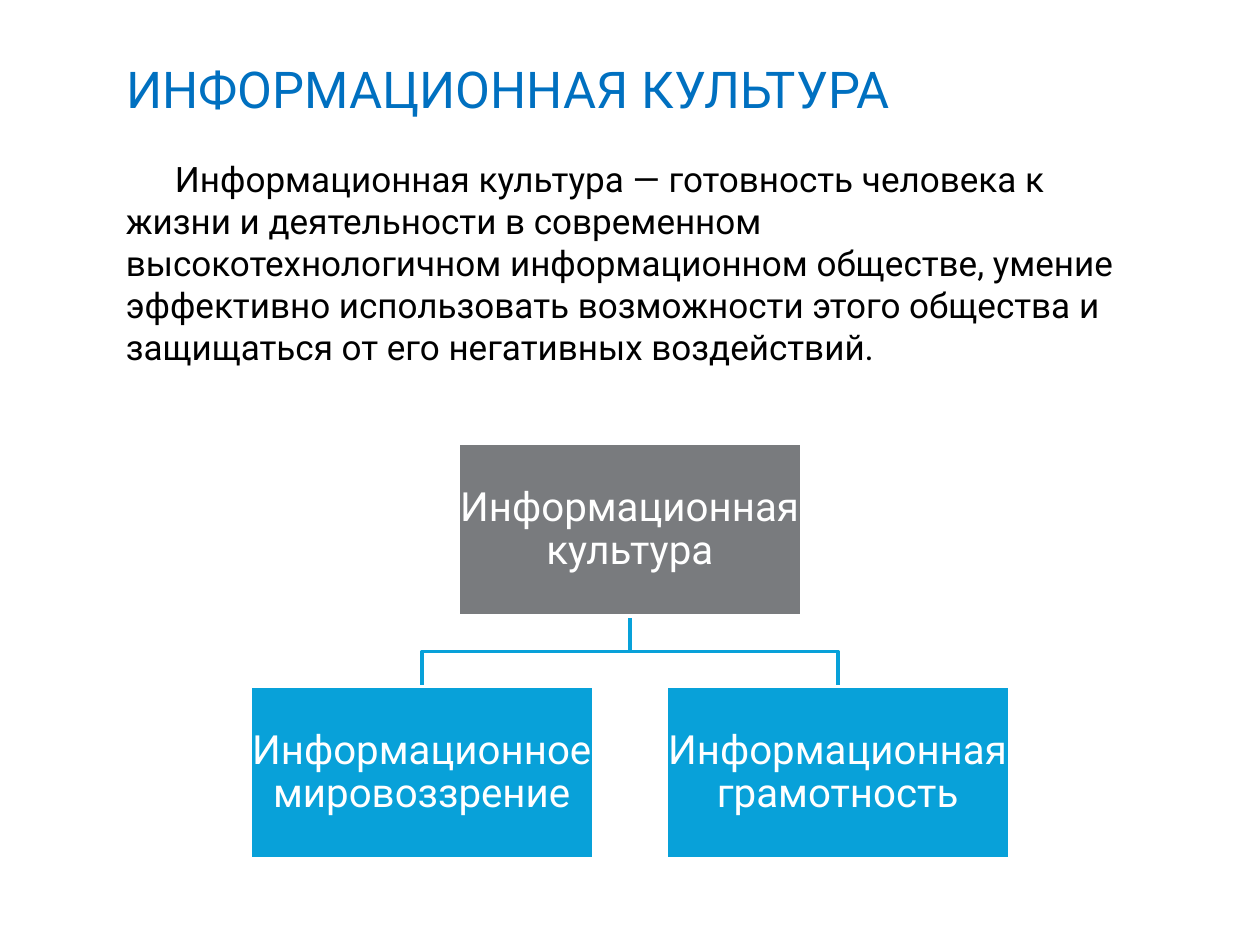
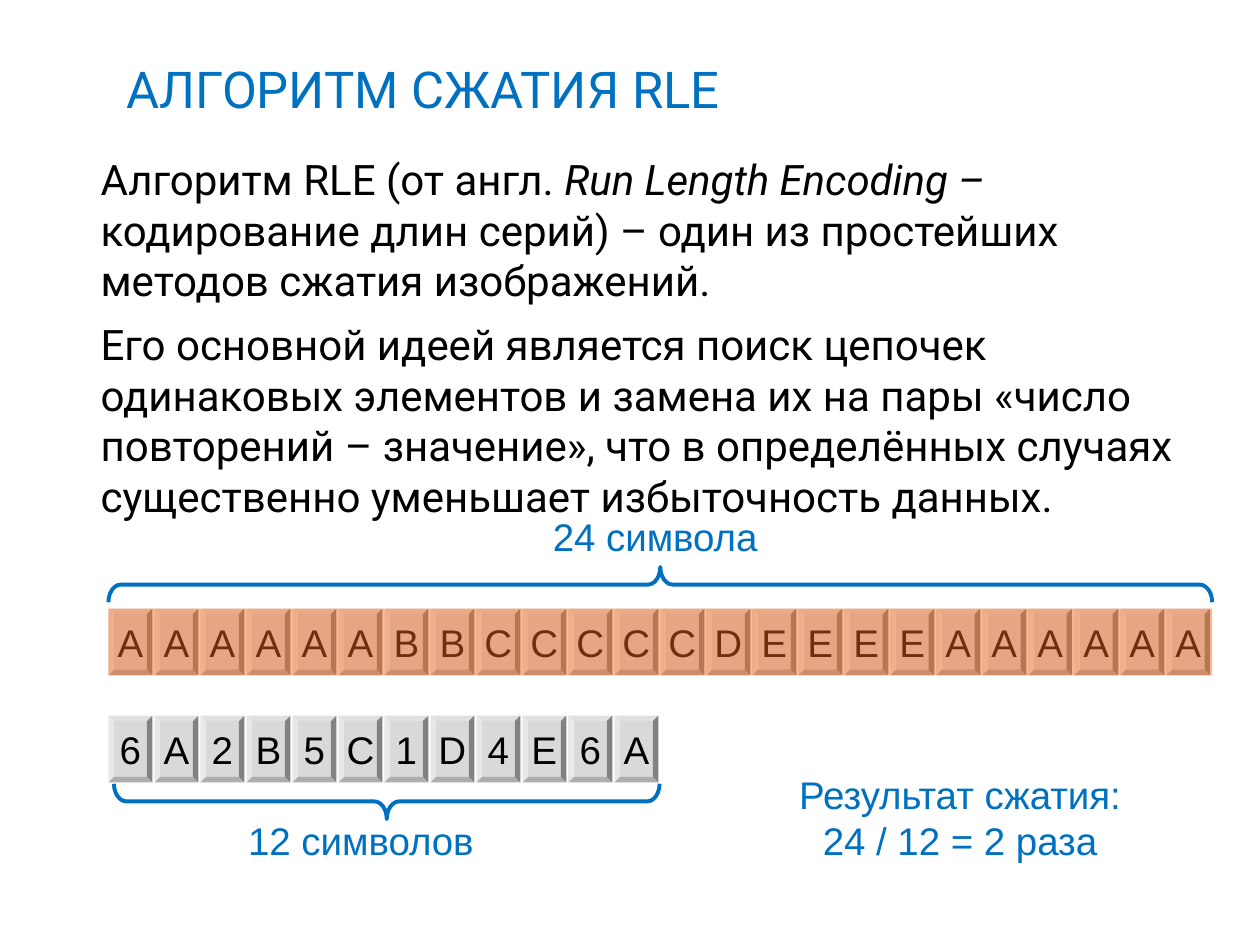
import itertools

import pptx
import pptx.dml.color
import pptx.enum.shapes
import pptx.enum.text
import pptx.oxml
import pptx.oxml.ns
import pptx.util

Inches = pptx.util.Inches
Pt = pptx.util.Pt
SHAPE = pptx.enum.shapes.MSO_SHAPE
ALIGN = pptx.enum.text.PP_ALIGN
ANCHOR = pptx.enum.text.MSO_ANCHOR

COLORS = {
    "title": "0070C0",
    "text": "000000",
    "white": "FFFFFF",
    "root": "797B7E",
    "branch": "08A1D9",
    "cell": "D9D9D9",
    "series": "F96A1B",
}
STYLES = {
    "title": {"name": "Roboto", "size": Pt(29), "color": "title"},
    "intro": {"name": "Roboto", "size": Pt(20), "color": "text"},
    "body": {"name": "Roboto", "size": Pt(24), "color": "text"},
    "node": {"name": "Roboto", "size": Pt(23), "color": "white"},
    "label": {"name": "Arial", "size": Pt(22), "color": "title"},
    "cell": {"name": "Arial", "size": Pt(22), "color": "text"},
}


def rgb(name):
    return pptx.dml.color.RGBColor.from_string(COLORS[name])


def put(obj, values):
    for key, value in values.items():
        setattr(obj, key, value)


class Deck:
    def __init__(self):
        self.prs = pptx.Presentation()
        put(self.prs, {"slide_width": Inches(10), "slide_height": Inches(7.5)})
        self.s = None

    def slide(self, title):
        self.s = self.prs.slides.add_slide(self.prs.slide_layouts[5])
        sp = self.s.shapes.title
        box = dict(zip(("left", "top", "width", "height"), map(Inches, (0.9, 0.4, 8.22, 0.6))))
        put(sp, box)
        self.set_text(sp, [title], "title", anchor=ANCHOR.MIDDLE)

    def set_text(self, sp, paragraphs, style, align=ALIGN.LEFT, anchor=ANCHOR.TOP,
                 insets=(0.1, 0.05), indent=0, gap=0, spacing=1.0):
        tf = sp.text_frame
        dx, dy = map(Inches, insets)
        put(tf, {"word_wrap": True, "vertical_anchor": anchor,
                 "auto_size": pptx.enum.text.MSO_AUTO_SIZE.NONE,
                 "margin_left": dx, "margin_right": dx,
                 "margin_top": dy, "margin_bottom": dy})
        for i, runs in enumerate(paragraphs):
            p = tf.add_paragraph() if i else tf.paragraphs[0]
            put(p, {"alignment": align, "line_spacing": spacing,
                    "space_before": Pt(gap if i else 0)})
            if indent:
                p._p.get_or_add_pPr().set("indent", str(Inches(indent)))
            for text, italic in [(runs, False)] if isinstance(runs, str) else runs:
                r = p.add_run()
                r.text = text
                font = dict(STYLES[style], italic=italic)
                r.font.color.rgb = rgb(font.pop("color"))
                put(r.font, font)

    def text(self, box, paragraphs, style, **layout):
        sp = self.s.shapes.add_textbox(*map(Inches, box))
        self.set_text(sp, paragraphs, style, **layout)

    def label(self, box, *lines):
        self.text(box, lines, "label", align=ALIGN.CENTER, anchor=ANCHOR.BOTTOM, insets=(0, 0.05))

    def shape(self, kind, box, fill=None, line=None, width=2, opacity=None):
        sp = self.s.shapes.add_shape(kind, *map(Inches, box))
        self.paint(sp, fill, line, width)
        if opacity:
            color = sp._element.spPr.find(".//" + pptx.oxml.ns.qn("a:srgbClr"))
            color.append(pptx.oxml.parse_xml(
                f'<a:alpha {pptx.oxml.ns.nsdecls("a")} val="{opacity * 1000}"/>'))
        return sp

    def paint(self, sp, fill, line, width):
        sp.shadow.inherit = False
        if fill:
            sp.fill.solid()
            sp.fill.fore_color.rgb = rgb(fill)
        else:
            sp.fill.background()
        if line:
            sp.line.color.rgb = rgb(line)
            sp.line.width = Pt(width)
        else:
            sp.line.fill.background()

    def node(self, box, text, fill):
        sp = self.shape(SHAPE.RECTANGLE, box, fill, "white")
        self.set_text(sp, [text], "node", ALIGN.CENTER, ANCHOR.MIDDLE, (0.01, 0.02), spacing=0.9)

    def branch(self, points):
        start, *rest = [tuple(map(Inches, point)) for point in points]
        builder = self.s.shapes.build_freeform(*start)
        builder.add_line_segments(rest, close=False)
        self.paint(builder.convert_to_shape(), None, "branch", 2)

    def brace(self, center_x, center_y, length, rotation):
        depth = 0.28
        box = (center_x - depth / 2, center_y - length / 2, depth, length)
        sp = self.shape(SHAPE.LEFT_BRACE, box, line="title", width=2.25)
        sp.rotation = rotation
        sp.adjustments[0] = 0.35

    def cells(self, symbols, left, top, pitch, height):
        for i, symbol in enumerate(symbols):
            sp = self.shape(SHAPE.BEVEL, (left + i * pitch, top, 0.35, height), "cell")
            self.set_text(sp, [symbol], "cell", ALIGN.CENTER, ANCHOR.MIDDLE, (0, 0))


def culture_slide(deck):
    deck.slide("ИНФОРМАЦИОННАЯ КУЛЬТУРА")
    deck.text((0.9, 1.2, 8.22, 1.84), [
        "Информационная культура — готовность человека к жизни и деятельности в современном "
        "высокотехнологичном информационном обществе, умение эффективно использовать "
        "возможности этого общества и защищаться от его негативных воздействий."
    ], "intro", indent=0.39)
    width, height = 2.73, 1.37
    root_x, root_y, child_y, offset = 5, 3.52, 5.45, 1.65
    root_bottom = root_y + height
    middle = (root_bottom + child_y) / 2
    children = [(root_x - offset, "Информационное мировоззрение"),
                (root_x + offset, "Информационная грамотность")]
    for x, _ in children:
        deck.branch([(root_x, root_bottom), (root_x, middle), (x, middle), (x, child_y)])
    deck.node((root_x - width / 2, root_y, width, height), "Информационная культура", "root")
    for x, text in children:
        deck.node((x - width / 2, child_y, width, height), text, "branch")


def rle_slide(deck):
    deck.slide("АЛГОРИТМ СЖАТИЯ RLE")
    deck.text((0.7, 1.17, 8.98, 2.89), [
        [("Алгоритм RLE (от англ. ", False), ("Run Length Encoding – ", True),
         ("кодирование длин серий) – один из простейших методов сжатия изображений.", False)],
        "Его основной идеей является поиск цепочек одинаковых элементов и замена их на пары "
        "«число повторений – значение», что в определённых случаях существенно уменьшает "
        "избыточность данных.",
    ], "body", gap=8)
    source = "AAAAAABBCCCCCDEEEEAAAAAA"
    series = [(len(list(group)), symbol) for symbol, group in itertools.groupby(source)]
    packed = "".join(f"{count}{symbol}" for count, symbol in series)
    left, top, row_width, height = 0.86, 4.83, 8.76, 0.53
    pitch = row_width / len(source)

    deck.brace(3.07, 6.36, 4.33, 270)
    deck.label((1.61, 6.51, 2.51, 0.39), "12 символов")
    deck.label((5.6, 6.07, 4.04, 0.83), "Результат сжатия:", "24 / 12 = 2 раза")
    deck.brace(left + row_width / 2, 4.64, row_width, 90)
    deck.label((4.22, 4.1, 1.96, 0.39), "24 символа")
    deck.cells(source, left, top, pitch, height)
    deck.cells(packed, left, 5.68, pitch, height)
    x = left
    for count, _ in series:
        deck.shape(SHAPE.RECTANGLE, (x, top, count * pitch, height), "series", opacity=45)
        x += count * pitch


def main():
    deck = Deck()
    culture_slide(deck)
    rle_slide(deck)
    deck.prs.save("out.pptx")


if __name__ == "__main__":
    main()
